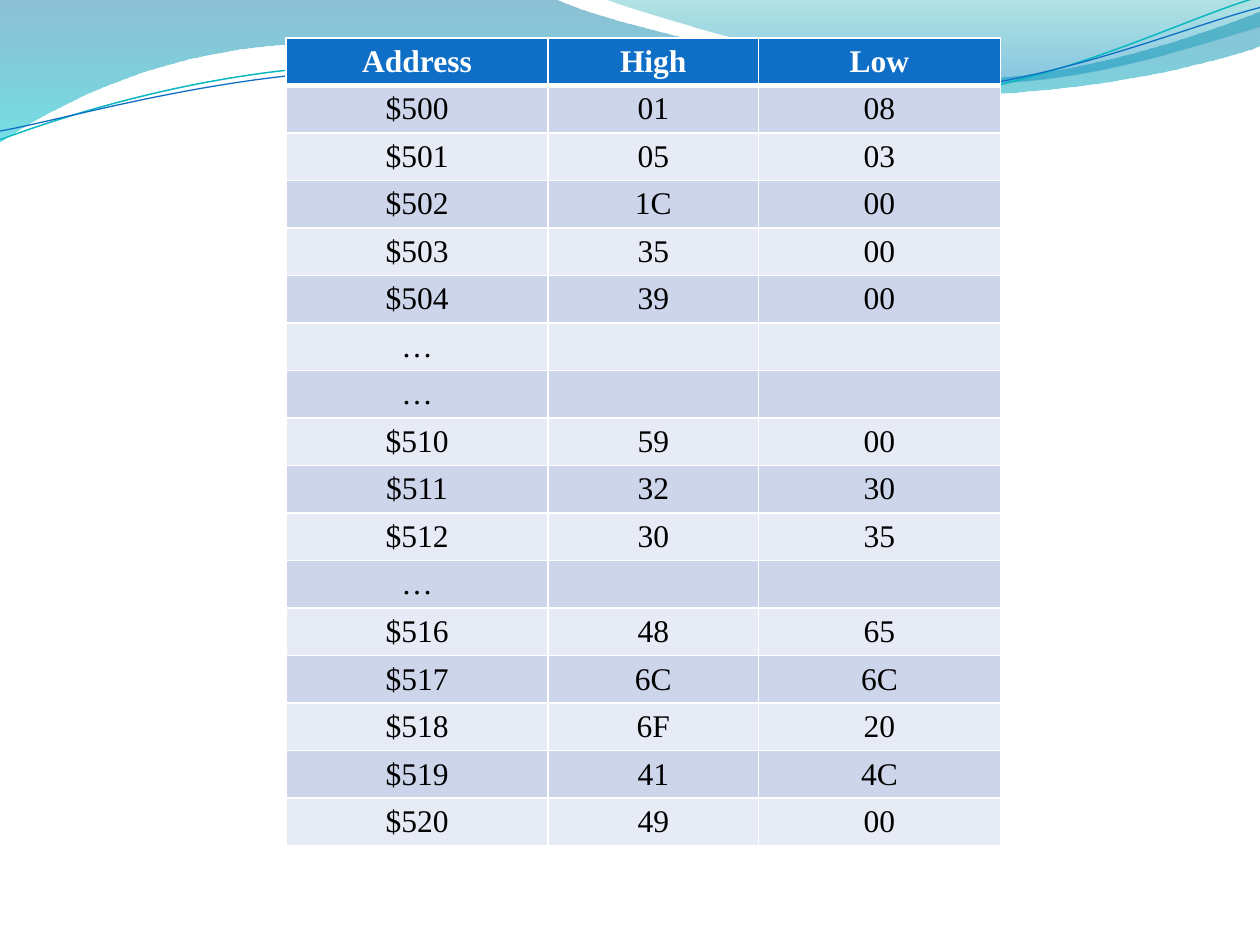
from pptx import Presentation
from pptx.dml.color import RGBColor as RGB
from pptx.enum.text import PP_ALIGN as Align
from pptx.oxml.ns import qn
from pptx.util import Inches, Pt
from lxml.etree import SubElement

WIDE, HIGH = 10, 7.5
FONT, SIZE = "Times New Roman", 18

# Each wave is a start point, then lines (2 numbers) and curves (6 numbers).
BANDS = [
    ([(0, 0), (4.4, -0.01), (4.76, 0.17, 6.64, 0.63, 7.58, 0.63),
      (8.53, 0.63, 9.58, 0.26, 10, 0.09), (10.01, 0.36),
      (9.83, 0.44, 8.7, 0.76, 7.46, 0.75), (6.22, 0.75, 3.82, 0.28, 2.57, 0.34),
      (1.29, 0.36, 0.46, 0.83, -0.01, 1.13), (0, 0)],
     [(0, "0074A1", 45), (1, "00C6CF", 55)]),
    ([(4.79, -0.01), (5.09, 0.11, 6.82, 0.62, 7.69, 0.65),
      (8.56, 0.69, 9.61, 0.32, 10, 0.21), (10, 0), (4.79, -0.01)],
     [(0, "00A1A9", 30), (0.8, "008BBF", 45)]),
]
LINES = [
    ([(0, 1.11), (0.48, 0.93, 1.58, 0.57, 2.77, 0.52),
      (3.95, 0.47, 5.93, 0.89, 7.13, 0.8), (8.33, 0.71, 9.38, 0.15, 9.98, -0.02)],
     "0AB8BF", 0.85),
    ([(0, 1.04), (0.47, 0.96, 1.64, 0.61, 2.83, 0.56),
      (4.03, 0.51, 5.97, 0.84, 7.17, 0.75), (8.36, 0.67, 9.41, 0.21, 10, 0.06)],
     "0F6FC6", 0.75),
]

HEAD = ["Address", "High", "Low"]
ROWS = [
    ["$500", "01", "08"], ["$501", "05", "03"], ["$502", "1C", "00"],
    ["$503", "35", "00"], ["$504", "39", "00"], ["…", "", ""], ["…", "", ""],
    ["$510", "59", "00"], ["$511", "32", "30"], ["$512", "30", "35"],
    ["…", "", ""], ["$516", "48", "65"], ["$517", "6C", "6C"],
    ["$518", "6F", "20"], ["$519", "41", "4C"], ["$520", "49", "00"],
]
COLS = [2.08, 1.67, 1.92]
ROW = 0.26


def color(code):
    return RGB.from_string(code)


def bend(shape, parts):
    """Turn each run of three line points into one Bézier curve."""
    points = iter(list(shape.element.iter(qn("a:lnTo"))))
    for part in parts:
        first = next(points)
        if len(part) == 6:
            first.tag_name = None
            curve = first.makeelement(qn("a:cubicBezTo"))
            first.addprevious(curve)
            for node in (first, next(points), next(points)):
                curve.append(node[0])
                node.getparent().remove(node)


def add_wave(slide, box, wave, close):
    left, top, wide, _ = box
    unit = wide / 10
    flat = [n for part in wave for n in part]
    dots = [(Inches(left + x * unit), Inches(top + y * unit))
            for x, y in zip(flat[::2], flat[1::2])]
    pen = slide.shapes.build_freeform(*dots[0])
    pen.add_line_segments(dots[1:], close=close)
    shape = pen.convert_to_shape()
    bend(shape, wave[1:])
    shape.shadow.inherit = False
    return shape


def fade(shape, stops):
    """Fill a shape from top to bottom with see-through colours."""
    fill = shape.fill
    fill.gradient()
    fill.gradient_angle = 270
    for stop, (place, code, _) in zip(fill.gradient_stops, stops):
        stop.position = place
        stop.color.rgb = color(code)
    for node, (_, _, share) in zip(shape.element.iter(qn("a:srgbClr")), stops):
        SubElement(node, qn("a:alpha"), val=str(share * 1000))
    shape.line.fill.background()


def add_waves(slide, box):
    for wave, stops in BANDS:
        fade(add_wave(slide, box, wave, True), stops)
    for wave, code, width in LINES:
        shape = add_wave(slide, box, wave, False)
        shape.fill.background()
        shape.line.color.rgb = color(code)
        shape.line.width = Pt(width)


def set_edges(cell, edges):
    """Draw white cell borders, given as side and width in points."""
    props = cell._tc.get_or_add_tcPr()
    for i, (side, width) in enumerate(edges):
        line = props.makeelement(qn("a:ln" + side), w=str(Pt(width)))
        fill = SubElement(line, qn("a:solidFill"))
        SubElement(fill, qn("a:srgbClr"), val="FFFFFF")
        props.insert(i, line)


def set_cell(cell, text, fill, ink, bold):
    cell.fill.solid()
    cell.fill.fore_color.rgb = color(fill)
    cell.text_frame.text = text
    para = cell.text_frame.paragraphs[0]
    para.alignment = Align.CENTER
    for run in para.runs:
        run.font.name, run.font.size = FONT, Pt(SIZE)
        run.font.bold = bold
        run.font.color.rgb = color(ink)
    end = SubElement(para._p, qn("a:endParaRPr"), sz=str(SIZE * 100))
    for script in ("latin", "ea", "cs"):
        SubElement(end, qn("a:" + script), typeface=FONT)


def add_memory(slide, box):
    """Add the memory table; its rows grow to fit their text."""
    data = [HEAD] + ROWS
    frame = slide.shapes.add_table(len(data), len(HEAD), *map(Inches, box))
    table = frame.table
    for col, share in zip(table.columns, COLS):
        col.width = Inches(box[2] * share / sum(COLS))
    for r, row in enumerate(data):
        table.rows[r].height = Inches(ROW)
        if r == 0:
            look = "0F6FC6", "FFFFFF", True
            edges = [("L", 1), ("R", 1), ("T", 1), ("B", 3)]
        else:
            look = ("CCD5EA" if r % 2 else "E7EBF5"), "000000", False
            edges = [("L", 1), ("R", 1), ("T", 3 if r == 1 else 1), ("B", 1)]
        for c, text in enumerate(row):
            set_cell(table.cell(r, c), text, *look)
            set_edges(table.cell(r, c), edges)
    frame.height = Inches(box[3])


def main():
    deck = Presentation()
    deck.slide_width, deck.slide_height = Inches(WIDE), Inches(HIGH)
    slide = deck.slides.add_slide(deck.slide_layouts[6])
    add_waves(slide, (0, 0, WIDE, HIGH))
    add_memory(slide, (2.27, 0.3, sum(COLS), 6.8))
    deck.save("out.pptx")


if __name__ == "__main__":
    main()
